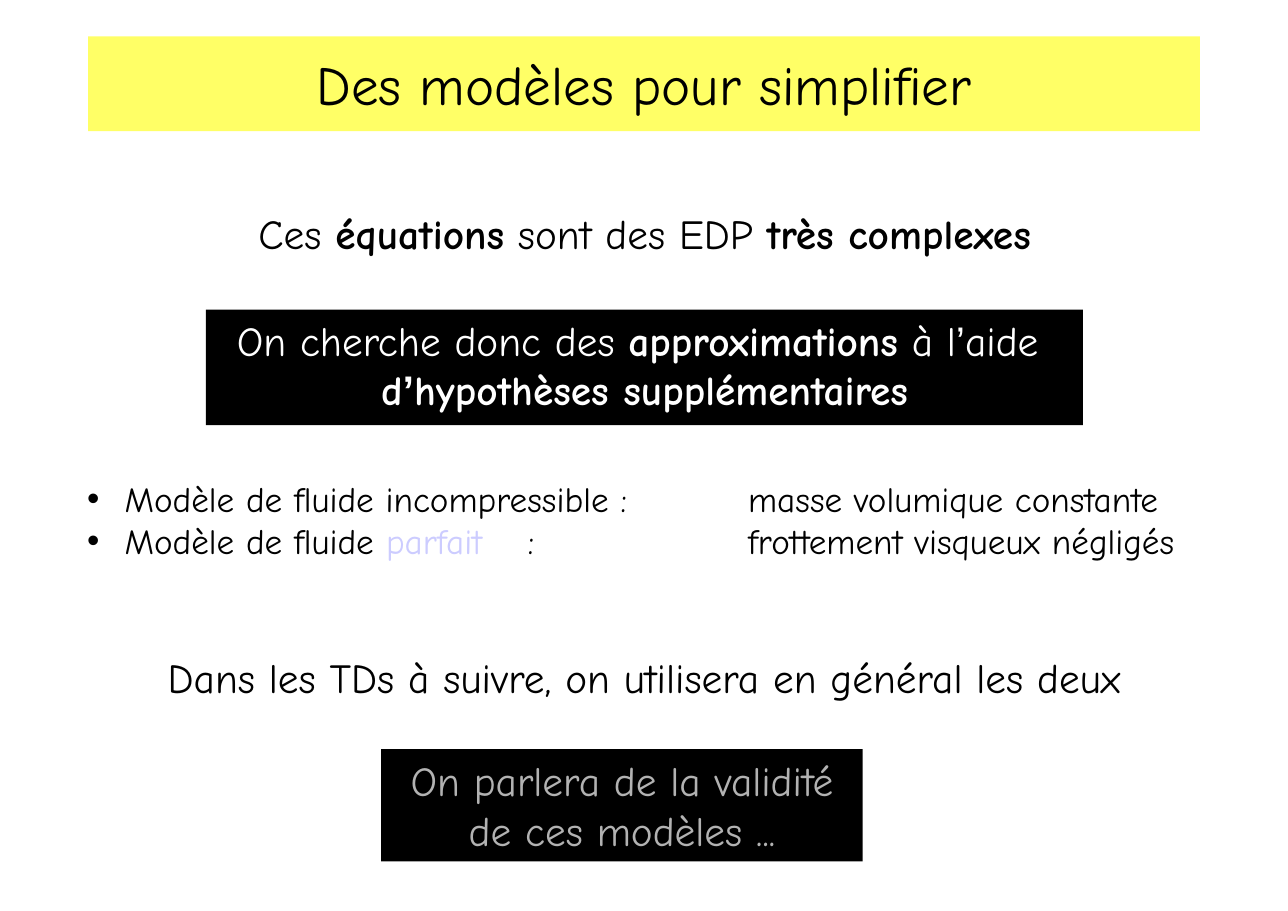
from dataclasses import dataclass

from lxml.etree import SubElement
from pptx import Presentation
from pptx.dml.color import RGBColor
from pptx.enum.shapes import MSO_SHAPE
from pptx.enum.text import MSO_ANCHOR, MSO_AUTO_SIZE, PP_ALIGN
from pptx.oxml.ns import qn
from pptx.util import Inches, Pt


@dataclass(frozen=True)
class Theme:
    face: str = "Comic Neue"
    apostrophe_face: str = "Arial"
    black: str = "000000"
    white: str = "FFFFFF"
    grey: str = "B2B2B2"
    lavender: str = "CCCCFF"
    yellow: str = "FFFF66"
    title_size: int = 36
    statement_size: int = 27
    model_size: int = 23


THEME = Theme()
BOLD = {"bold": True}
APOSTROPHE = {"name": THEME.apostrophe_face}
BOLD_APOSTROPHE = BOLD | APOSTROPHE


def place(shape, box):
    for side, length in zip(("left", "top", "width", "height"), box):
        setattr(shape, side, Inches(length))


def set_frame(shape, inset=(0.1, 0.05), anchor=MSO_ANCHOR.TOP, wrap=True):
    across, down = (Inches(length) for length in inset)
    settings = {
        "margin_left": across, "margin_right": across,
        "margin_top": down, "margin_bottom": down,
        "vertical_anchor": anchor, "word_wrap": wrap,
        "auto_size": MSO_AUTO_SIZE.NONE,
    }
    for key, value in settings.items():
        setattr(shape.text_frame, key, value)
    return shape.text_frame


def fill_with(shape, colour):
    shape.fill.solid()
    shape.fill.fore_color.rgb = RGBColor.from_string(colour)


def write_run(paragraph, words, size, colour, style=None):
    run = paragraph.add_run()
    run.text = words
    settings = {"name": THEME.face, "size": Pt(size), "bold": False} | (style or {})
    for key, value in settings.items():
        setattr(run.font, key, value)
    run.font.color.rgb = RGBColor.from_string(colour)


def write_lines(frame, lines, size, colour):
    paragraph = frame.paragraphs[0]
    paragraph.alignment = PP_ALIGN.CENTER
    for number, pieces in enumerate(lines):
        if number:
            paragraph.add_line_break()
        for words, style in pieces:
            write_run(paragraph, words, size, colour, style)


def add_title(slide, box, words):
    title = slide.shapes.title
    place(title, box)
    fill_with(title, THEME.yellow)
    frame = set_frame(title, inset=(0, 0), anchor=MSO_ANCHOR.MIDDLE)
    write_lines(frame, [[(words, None)]], THEME.title_size, THEME.black)


def add_statement(slide, box, pieces):
    statement = slide.shapes.add_textbox(*map(Inches, box))
    write_lines(set_frame(statement), [pieces], THEME.statement_size, THEME.black)


def add_banner(slide, box, lines, colour, inset=(0.1, 0.05)):
    banner = slide.shapes.add_shape(MSO_SHAPE.RECTANGLE, *map(Inches, box))
    banner.shadow.inherit = False
    fill_with(banner, THEME.black)
    banner.line.fill.background()
    frame = set_frame(banner, inset, wrap=False)
    write_lines(frame, lines, THEME.statement_size, colour)


def add_bullet(paragraph, indent, stops):
    properties = paragraph._p.get_or_add_pPr()
    properties.set("marL", str(Inches(indent)))
    properties.set("indent", str(-Inches(indent)))
    SubElement(properties, qn("a:buFont"), typeface=THEME.apostrophe_face)
    SubElement(properties, qn("a:buChar"), char="•")
    tabs = SubElement(properties, qn("a:tabLst"))
    for stop in stops:
        SubElement(tabs, qn("a:tab"), pos=str(Inches(stop)), algn="l")


def add_models(slide, box, models):
    body = slide.placeholders[1]
    place(body, box)
    frame = set_frame(body)
    for number, pieces in enumerate(models):
        paragraph = frame.add_paragraph() if number else frame.paragraphs[0]
        paragraph.space_before = Pt(0)
        paragraph.line_spacing = 1.0
        add_bullet(paragraph, indent=0.34, stops=(4, 6))
        for words, colour in pieces:
            write_run(paragraph, words, THEME.model_size, colour)


def build_simplification(slide):
    add_title(slide, (0.8, 0.33, 10.09, 0.86), "Des modèles pour simplifier")
    add_models(slide, (0.69, 4.28, 10.41, 0.91), [
        [("Modèle de fluide incompressible :\tmasse volumique constante", THEME.black)],
        [
            ("Modèle de fluide ", THEME.black),
            ("parfait", THEME.lavender),
            ("\t:\tfrottement visqueux négligés", THEME.black),
        ],
    ])
    add_statement(slide, (1.44, 1.84, 8.82, 0.57), [
        ("Ces ", None), ("équations", BOLD),
        (" sont des EDP ", None), ("très complexes", BOLD),
    ])
    add_banner(slide, (1.87, 2.81, 7.96, 1.05), [
        [
            ("On cherche donc des ", None), ("approximations", BOLD),
            (" à l", None), ("’", APOSTROPHE), ("aide ", None),
        ],
        [("d", BOLD), ("’", BOLD_APOSTROPHE), ("hypothèses supplémentaires", BOLD)],
    ], THEME.white)
    add_statement(slide, (1.13, 5.87, 9.43, 0.56), [
        ("Dans les TDs à suivre, on utilisera en général les deux", None),
    ])
    add_banner(slide, (3.46, 6.8, 4.37, 1.02), [
        [("On parlera de la validité", None)],
        [("de ces modèles ...", None)],
    ], THEME.grey, inset=(0.11, 0.06))


def main():
    deck = Presentation()
    deck.slide_width, deck.slide_height = Inches(11.69), Inches(8.27)
    build_simplification(deck.slides.add_slide(deck.slide_layouts[1]))
    deck.save("out.pptx")


if __name__ == "__main__":
    main()
